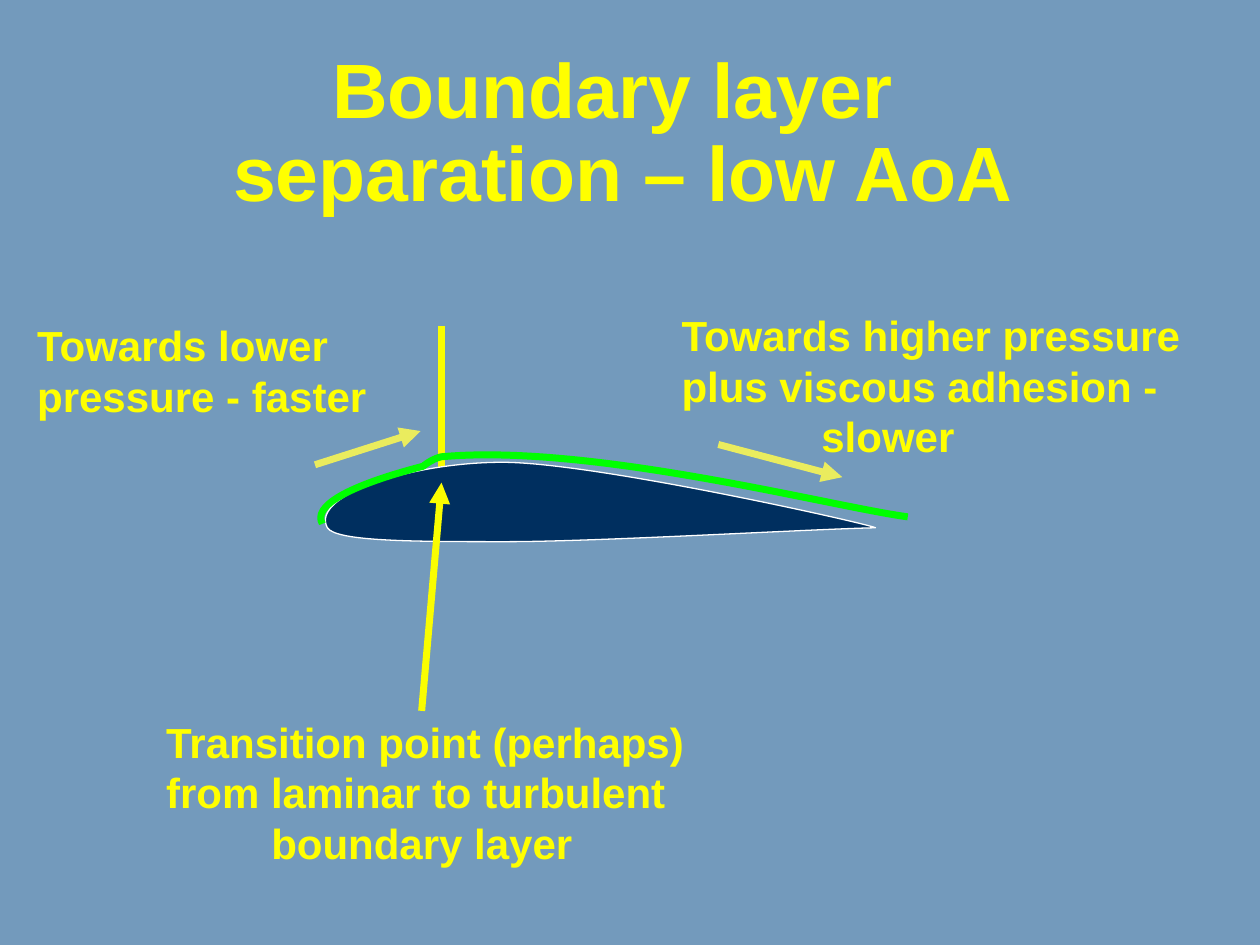
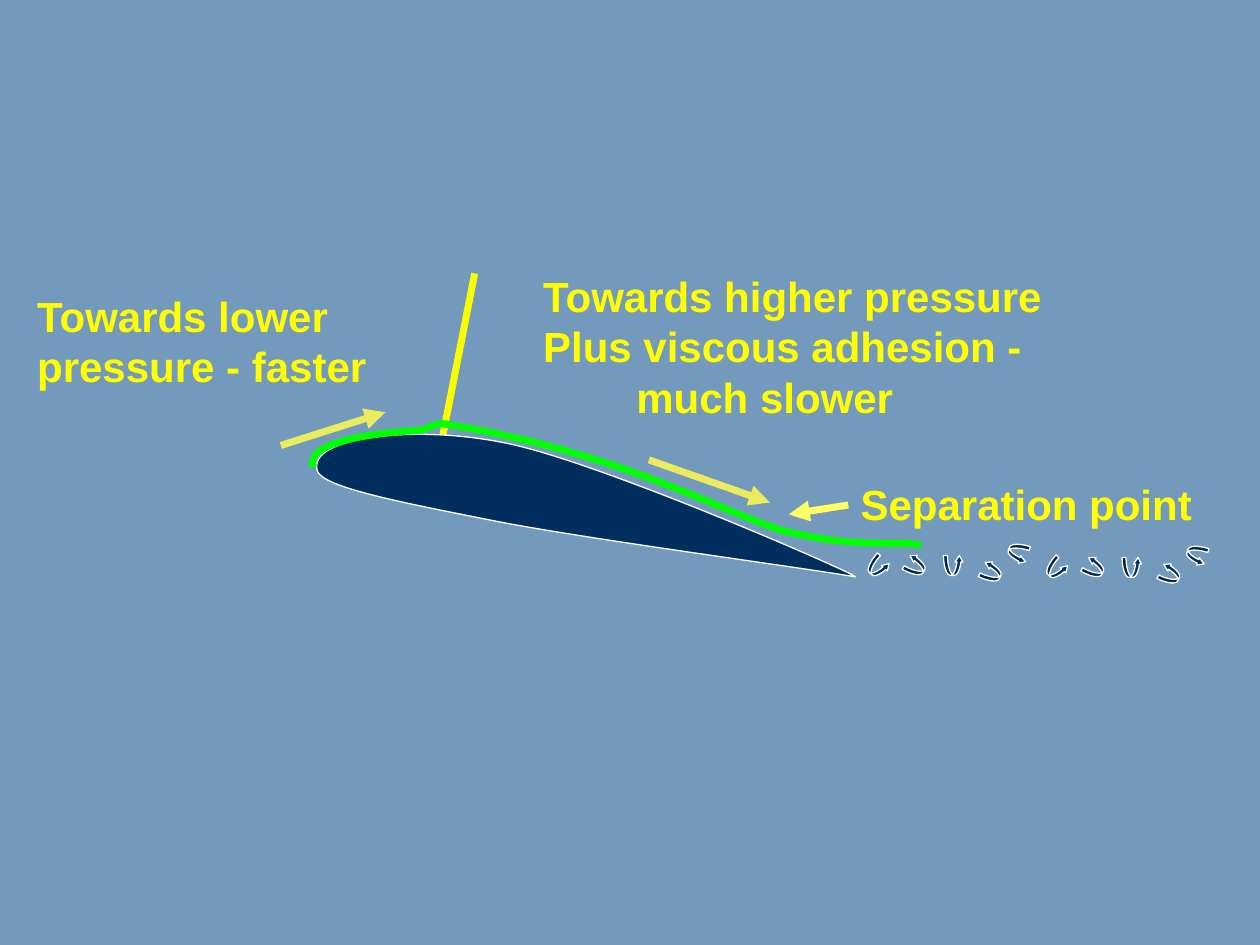
"""Build two slides on boundary layer separation over an aerofoil."""
from lxml import etree
from pptx import Presentation
from pptx.dml.color import RGBColor
from pptx.enum.shapes import MSO_CONNECTOR, MSO_SHAPE
from pptx.enum.text import MSO_ANCHOR, PP_ALIGN
from pptx.oxml.ns import qn
from pptx.util import Cm, Pt

STRAIGHT = MSO_CONNECTOR.STRAIGHT
SWIRL = MSO_SHAPE.CURVED_UP_ARROW
MIDDLE = MSO_ANCHOR.MIDDLE
CENTER = PP_ALIGN.CENTER

BACKGROUND = RGBColor(0x73, 0x9A, 0xBC)
TEXT_YELLOW = RGBColor(0xFF, 0xFF, 0x00)
STEM_YELLOW = RGBColor(0xFA, 0xFD, 0x00)
FLOW_YELLOW = RGBColor(0xEA, 0xEC, 0x5E)
PALE_YELLOW = RGBColor(0xFF, 0xFF, 0x66)
NAVY = RGBColor(0x00, 0x2F, 0x5F)
WHITE = RGBColor(0xFF, 0xFF, 0xFF)
GREEN = RGBColor(0x00, 0xFF, 0x00)

FONT = "Arial"
THICK, THIN = 4, 0.75

TITLE = ("Boundary layer ", "separation – low AoA")
TITLE_BOX = (4.34, 0.91, 16.46, 3.63)

LOWER_PRESSURE = ("Towards lower", "pressure - faster")

SLIDES = [
    {
        "title": TITLE,
        "labels": [
            ((0.5, 6.32, 7.21, 2.31), LOWER_PRESSURE, 0),
            ((13.49, 6.12, 10.64, 3.33),
             ("Towards higher pressure", "plus viscous adhesion -", "slower"), 2.82),
            ((3.1, 14.32, 11.18, 3.33),
             ("Transition point (perhaps)", "from laminar to turbulent", "boundary layer"), 2.12),
        ],
        "stem": ((8.9, 9.88), (8.9, 6.57)),
        "arrows": [
            ((6.35, 9.37), (8.48, 8.69), FLOW_YELLOW),
            ((14.48, 8.96), (16.98, 9.62), FLOW_YELLOW),
            ((8.5, 14.33), (8.9, 9.73), STEM_YELLOW),
        ],
        "aerofoil": [
            (6.6, 10.64),
            (6.25, 9.98), (8.31, 9.32), (10.13, 9.32),
            (11.99, 9.32), (17.55, 10.57), (17.65, 10.64),
            (16.26, 10.67), (12.07, 10.92), (10.21, 10.92),
            (8.38, 10.92), (6.78, 10.92), (6.6, 10.64),
        ],
        "boundary_layer": [
            (6.5, 10.56),
            (6.3, 10.21), (6.99, 9.8), (8.53, 9.4),
            (8.53, 9.4), (8.69, 9.26), (8.89, 9.21),
            (11.89, 8.93), (16.74, 10.21), (18.3, 10.42),
        ],
        "swirl_rows": [],
    },
    {
        "title": None,
        "labels": [
            ((0.5, 5.73, 7.21, 2.31), LOWER_PRESSURE, 0),
            ((10.7, 5.33, 10.64, 3.33),
             ("Towards higher pressure", "Plus viscous adhesion -", "much slower"), 1.88),
            ((17.1, 9.53, 7.24, 1.27), ("Separation point",), 0),
        ],
        "stem": ((8.93, 8.76), (9.57, 5.51)),
        "arrows": [
            ((5.66, 8.98), (7.77, 8.31), FLOW_YELLOW),
            ((13.08, 9.27), (15.52, 10.13), FLOW_YELLOW),
            ((17.1, 10.18), (15.9, 10.37), PALE_YELLOW),
        ],
        "aerofoil": [
            (6.4, 9.5),
            (6.17, 8.81), (8.33, 8.56), (10.13, 8.92),
            (11.94, 9.25), (17.17, 11.53), (17.25, 11.63),
            (15.88, 11.4), (11.71, 10.85), (9.91, 10.49),
            (8.1, 10.13), (6.53, 9.83), (6.4, 9.5),
        ],
        "boundary_layer": [
            (6.32, 9.42),
            (6.17, 9.04), (6.93, 8.76), (8.53, 8.67),
            (8.53, 8.67), (8.71, 8.56), (8.92, 8.54),
            (12.47, 9.12), (14.25, 10.19), (15.75, 10.69),
            (17.35, 11.1), (18.21, 10.87), (18.57, 11),
        ],
        "swirl_rows": [(0, 0), (3.6, 0.04)],
    },
]

SWIRL_SIZE = 0.4
SWIRL_ADJUSTMENTS = (0.2, 0.4, 0.33)
SWIRLS = [
    (17.5, 11.23, 42.6),
    (18.26, 11.2, 299.5),
    (19.02, 11.2, 0),
    (19.79, 11.33, 295.8),
    (20.32, 10.95, 108.2),
]


def style_line(shape, color, width):
    shape.line.color.rgb = color
    shape.line.width = Pt(width)


def add_text_box(slide, box):
    frame = slide.shapes.add_textbox(*map(Cm, box)).text_frame
    frame.word_wrap = False
    return frame


def add_run(paragraph, text, size):
    run = paragraph.add_run()
    run.text = text
    run.font.name = FONT
    run.font.size = Pt(size)
    run.font.bold = True
    run.font.color.rgb = TEXT_YELLOW


def add_title(slide, lines):
    frame = add_text_box(slide, TITLE_BOX)
    frame.vertical_anchor = MIDDLE
    paragraph = frame.paragraphs[0]
    paragraph.alignment = CENTER
    paragraph.line_spacing = 0.9
    for index, line in enumerate(lines):
        if index:
            paragraph.add_line_break()
        add_run(paragraph, line, 44)


def add_label(slide, box, lines, last_indent):
    frame = add_text_box(slide, box)
    for index, line in enumerate(lines):
        paragraph = frame.add_paragraph() if index else frame.paragraphs[0]
        add_run(paragraph, line, 24)
    if last_indent:
        paragraph._p.get_or_add_pPr().set("marL", str(Cm(last_indent)))


def add_line(slide, start, end, color, arrow=False):
    connector = slide.shapes.add_connector(STRAIGHT, *map(Cm, start + end))
    style_line(connector, color, THICK)
    if arrow:
        etree.SubElement(connector.line._get_or_add_ln(), qn("a:tailEnd"), type="triangle")
    etree.SubElement(connector._element.spPr, qn("a:effectLst"))


def bend_segments(shape):
    """Turn each three straight segments into one cubic curve."""
    segments = list(shape._element.iter(qn("a:lnTo")))
    for first in range(0, len(segments), 3):
        curve = etree.Element(qn("a:cubicBezTo"))
        segments[first].addprevious(curve)
        for segment in segments[first:first + 3]:
            curve.append(segment[0])
            segment.getparent().remove(segment)


def add_curve(slide, points, color, width, fill=None):
    start, *others = [(Cm(x), Cm(y)) for x, y in points]
    builder = slide.shapes.build_freeform(*start)
    builder.add_line_segments(others, close=fill is not None)
    shape = builder.convert_to_shape()
    bend_segments(shape)
    shape.shadow.inherit = False
    style_line(shape, color, width)
    if fill is None:
        shape.fill.background()
    else:
        shape.fill.solid()
        shape.fill.fore_color.rgb = fill


def add_swirl(slide, left, top, rotation):
    shape = slide.shapes.add_shape(SWIRL, *map(Cm, (left, top, SWIRL_SIZE, SWIRL_SIZE)))
    shape.shadow.inherit = False
    shape.rotation = rotation
    for index, value in enumerate(SWIRL_ADJUSTMENTS):
        shape.adjustments[index] = value
    shape.fill.solid()
    shape.fill.fore_color.rgb = NAVY
    style_line(shape, WHITE, THIN)


def add_slide(presentation, content):
    slide = presentation.slides.add_slide(presentation.slide_layouts[6])
    slide.background.fill.solid()
    slide.background.fill.fore_color.rgb = BACKGROUND
    if content["title"]:
        add_title(slide, content["title"])
    for label in content["labels"]:
        add_label(slide, *label)
    add_line(slide, *content["stem"], STEM_YELLOW)
    add_curve(slide, content["aerofoil"], WHITE, THIN, NAVY)
    add_curve(slide, content["boundary_layer"], GREEN, THICK)
    for arrow in content["arrows"]:
        add_line(slide, *arrow, arrow=True)
    for shift_x, shift_y in content["swirl_rows"]:
        for left, top, rotation in SWIRLS:
            add_swirl(slide, left + shift_x, top + shift_y, rotation)


def main():
    presentation = Presentation()
    presentation.slide_width = Cm(25.4)
    presentation.slide_height = Cm(19.05)
    for content in SLIDES:
        add_slide(presentation, content)
    presentation.save("out.pptx")


if __name__ == "__main__":
    main()
